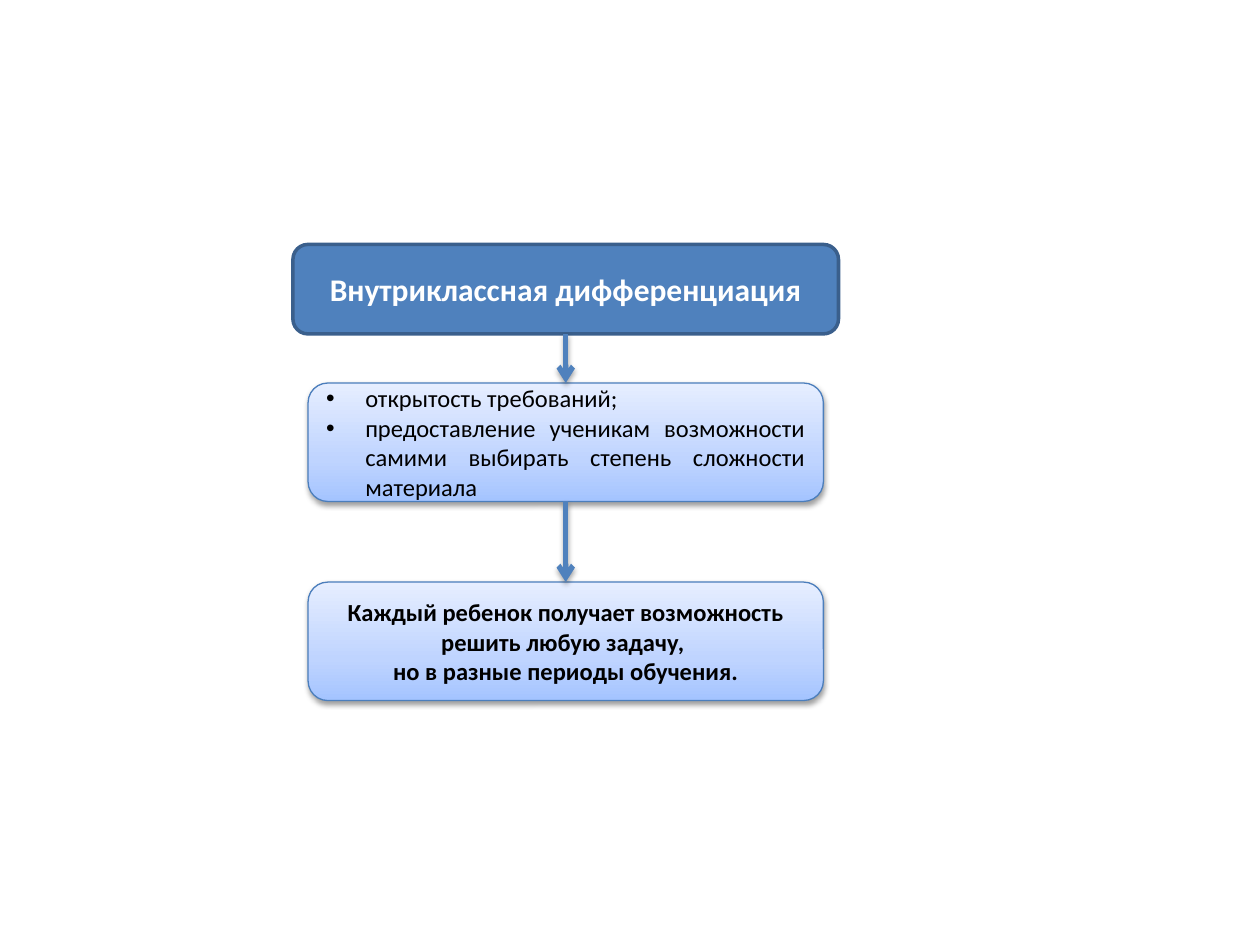
from dataclasses import dataclass

from lxml.etree import SubElement
from pptx import Presentation
from pptx.dml.color import RGBColor
from pptx.enum.shapes import MSO_CONNECTOR as Connector, MSO_SHAPE as Shape
from pptx.enum.text import MSO_ANCHOR as Anchor, PP_ALIGN as Align
from pptx.oxml.ns import qn
from pptx.util import Inches, Pt


@dataclass(frozen=True)
class Theme:
    font: str = "Calibri"
    title_size: int = 18
    body_size: int = 14
    accent: str = "4F81BD"
    title_line: str = "3A5F8C"
    card_line: str = "4B7EBC"
    light_text: str = "FFFFFF"
    dark_text: str = "000000"
    shadow: str = "000000"
    card_stops: tuple = ((0, "A4C4FF"), (35, "BFD4FF"), (100, "E6EEFF"))


class DiagramPage:
    def __init__(self, deck, theme):
        self.theme = theme
        self.page = deck.slides.add_slide(deck.slide_layouts[6])

    def add_box(self, left, top, width, height, line, line_width):
        box = self.page.shapes.add_shape(
            Shape.ROUNDED_RECTANGLE, Inches(left), Inches(top), Inches(width), Inches(height))
        box.shadow.inherit = False
        box.line.color.rgb = RGBColor.from_string(line)
        box.line.width = Pt(line_width)
        box.text_frame.word_wrap = True
        box.text_frame.vertical_anchor = Anchor.MIDDLE
        return box

    def add_title(self, left, top, width, height, text):
        theme = self.theme
        box = self.add_box(left, top, width, height, theme.title_line, 2)
        box.fill.solid()
        box.fill.fore_color.rgb = RGBColor.from_string(theme.accent)
        self.add_text(box, [text], theme.title_size, theme.light_text, bold=True)

    def add_card(self, left, top, width, height, lines, bullets=False):
        theme = self.theme
        box = self.add_box(left, top, width, height, theme.card_line, 0.75)
        box.fill.gradient()
        box.fill.gradient_angle = 90
        stops = box._element.spPr.find(".//" + qn("a:gsLst"))
        for stop in list(stops):
            stops.remove(stop)
        for percent, color in theme.card_stops:
            stop = SubElement(stops, qn("a:gs"), pos=str(percent * 1000))
            SubElement(stop, qn("a:srgbClr"), val=color)
        self.add_shadow(box, opacity=38, distance=1.6)
        self.add_text(box, lines, theme.body_size, theme.dark_text,
                      bold=not bullets, bullets=bullets)

    def add_arrow(self, x, top, bottom):
        arrow = self.page.shapes.add_connector(
            Connector.STRAIGHT, Inches(x), Inches(top), Inches(x), Inches(bottom))
        arrow.line.color.rgb = RGBColor.from_string(self.theme.accent)
        arrow.line.width = Pt(3)
        line = arrow._element.spPr.find(qn("a:ln"))
        SubElement(line, qn("a:tailEnd"), type="arrow")
        SubElement(arrow._element.spPr, qn("a:effectLst"))
        self.add_shadow(arrow, opacity=35, distance=1.8)

    def add_shadow(self, item, opacity, distance):
        effects = item._element.spPr.find(qn("a:effectLst"))
        shadow = SubElement(effects, qn("a:outerShdw"), blurRad=str(Pt(3.1)),
                            dist=str(Pt(distance)), dir="5400000", rotWithShape="0")
        color = SubElement(shadow, qn("a:srgbClr"), val=self.theme.shadow)
        SubElement(color, qn("a:alpha"), val=str(opacity * 1000))

    def add_text(self, box, lines, size, color, bold, bullets=False):
        frame = box.text_frame
        for index, line in enumerate(lines):
            para = frame.add_paragraph() if index else frame.paragraphs[0]
            para.text = line
            para.alignment = Align.JUSTIFY if bullets else Align.CENTER
            if bullets:
                self.add_bullet(para)
            font = para.font
            font.name, font.size, font.bold = self.theme.font, Pt(size), bold
            font.color.rgb = RGBColor.from_string(color)

    def add_bullet(self, para):
        props = para._p.get_or_add_pPr()
        indent = Inches(0.31)
        props.set("marL", str(indent))
        props.set("indent", str(-indent))
        SubElement(props, qn("a:buFont"), typeface="Arial")
        SubElement(props, qn("a:buChar"), char="•")


def main():
    deck = Presentation()
    deck.slide_width, deck.slide_height = Inches(10), Inches(7.5)
    diagram = DiagramPage(deck, Theme())

    # Shared column geometry
    center = 4.49
    title_top, title_width, title_height = 1.94, 4.33, 0.71
    card_width, card_height = 4.09, 0.94
    features_top, outcome_top = 3.04, 4.62
    card_left = center - card_width / 2

    # Title and cards
    diagram.add_title(center - title_width / 2, title_top, title_width, title_height,
                      "Внутриклассная дифференциация")
    diagram.add_card(card_left, features_top, card_width, card_height, [
        "открытость требований;",
        "предоставление ученикам возможности самими выбирать степень сложности материала",
    ], bullets=True)
    diagram.add_card(card_left, outcome_top, card_width, card_height, [
        "Каждый ребенок получает возможность решить любую задачу, ",
        "но в разные периоды обучения.",
    ])

    # Arrows across the gaps
    diagram.add_arrow(center, title_top + title_height, features_top)
    diagram.add_arrow(center, features_top + card_height, outcome_top)

    deck.save("out.pptx")


if __name__ == "__main__":
    main()
